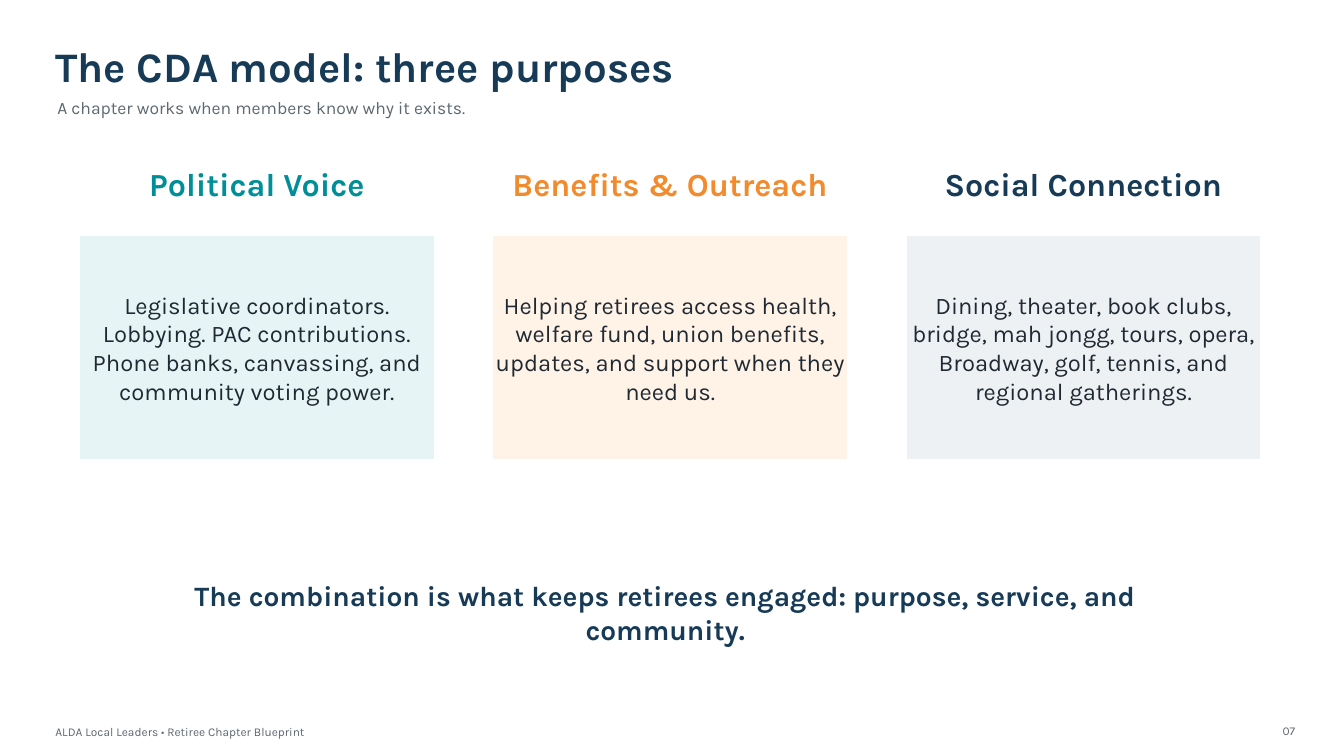
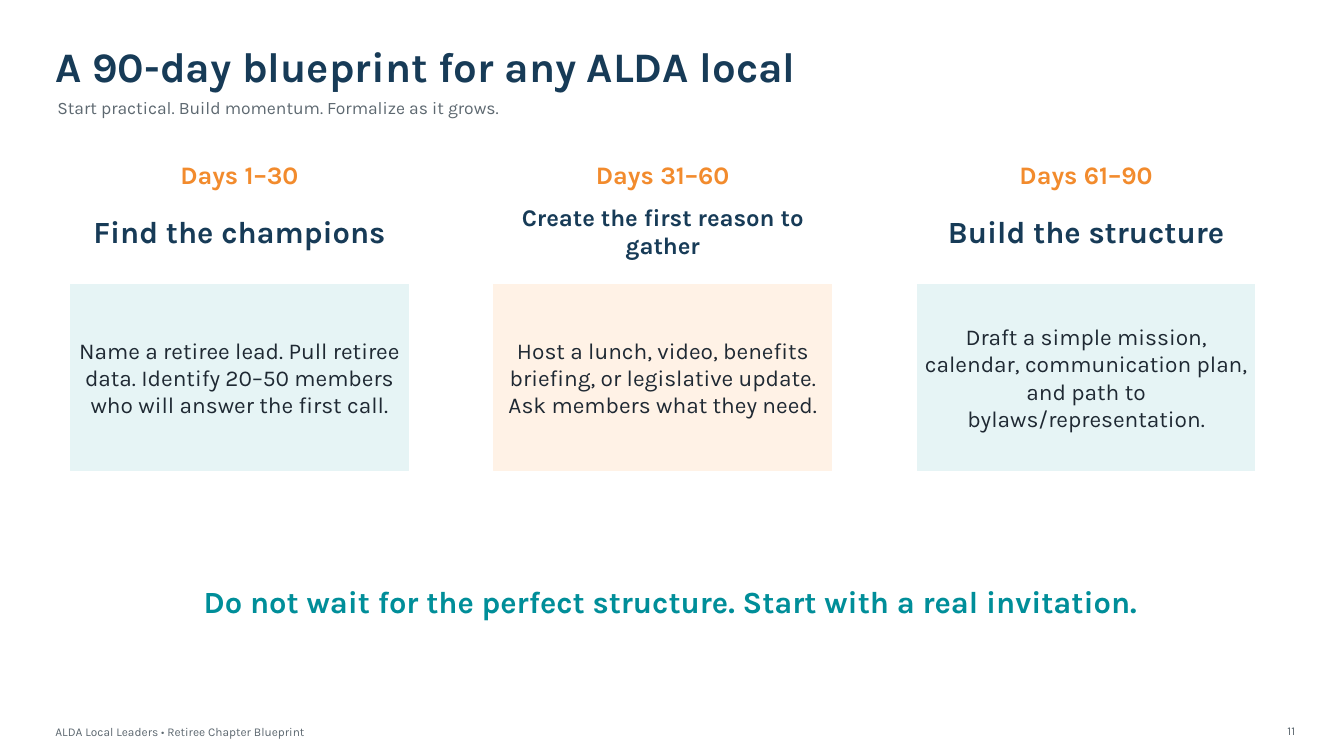
from pptx import Presentation
from pptx.dml.color import RGBColor
from pptx.enum.shapes import MSO_SHAPE as Shape
from pptx.enum.text import MSO_ANCHOR as Anchor, PP_ALIGN as Align
from pptx.util import Pt

COLOURS = {
    "navy": "173B57",
    "teal": "008E99",
    "orange": "F28B2D",
    "ink": "1F2933",
    "grey": "5D6870",
    "pale teal": "E6F4F5",
    "pale orange": "FFF2E6",
    "pale grey": "EEF1F4",
}


class Deck:
    font = "Karla"
    footer = "ALDA Local Leaders • Retiree Chapter Blueprint"

    def __init__(self):
        self.deck = Presentation()
        self.deck.slide_width = Pt(960)
        self.deck.slide_height = Pt(540)
        self.page = None

    def colour(self, name):
        return RGBColor.from_string(COLOURS[name])

    def add_page(self, title, subtitle, number):
        self.page = self.deck.slides.add_slide(self.deck.slide_layouts[6])
        self.text(title, (39.6, 28.8, 540, 36), 30, "navy", True, Align.LEFT)
        self.text(subtitle, (41, 67.7, 648, 18), 12.5, "grey", align=Align.LEFT)
        self.text(self.footer, (39.6, 514.8, 468, 15.8), 8.5, "grey", align=Align.LEFT)
        self.text(number, (896.4, 512.6, 28.8, 18), 8.5, "grey", align=Align.RIGHT)

    def set_text(self, box, words, size, colour, bold, align):
        frame = box.text_frame
        frame.text = words
        frame.word_wrap = True
        frame.vertical_anchor = Anchor.MIDDLE
        frame.margin_left = frame.margin_right = 0
        frame.margin_top = frame.margin_bottom = 0
        para = frame.paragraphs[0]
        para.alignment = align
        for span in para.runs:
            span.font.name = self.font
            span.font.size = Pt(size)
            span.font.bold = bold
            span.font.color.rgb = self.colour(colour)

    def text(self, words, area, size, colour, bold=False, align=Align.CENTER):
        box = self.page.shapes.add_textbox(*map(Pt, area))
        self.set_text(box, words, size, colour, bold, align)

    def card(self, words, area, size, fill):
        box = self.page.shapes.add_shape(Shape.RECTANGLE, *map(Pt, area))
        box.shadow.inherit = False
        box.fill.solid()
        box.fill.fore_color.rgb = self.colour(fill)
        box.line.color.rgb = self.colour(fill)
        box.line.width = Pt(0.75)
        self.set_text(box, words, size, "ink", False, Align.CENTER)

    def save(self):
        self.deck.save("out.pptx")


def add_purposes(deck):
    deck.add_page(
        "The CDA model: three purposes",
        "A chapter works when members know why it exists.",
        "07",
    )
    purposes = [
        ("Political Voice", "teal", "pale teal",
         "Legislative coordinators. Lobbying. PAC contributions. "
         "Phone banks, canvassing, and community voting power."),
        ("Benefits & Outreach", "orange", "pale orange",
         "Helping retirees access health, welfare fund, union benefits, "
         "updates, and support when they need us."),
        ("Social Connection", "navy", "pale grey",
         "Dining, theater, book clubs, bridge, mah jongg, tours, opera, "
         "Broadway, golf, tennis, and regional gatherings."),
    ]
    left, pitch, width = 57.6, 295.2, 252
    for column, (heading, colour, fill, details) in enumerate(purposes):
        x = left + column * pitch
        deck.text(heading, (x, 115.2, width, 32.4), 23, colour, True)
        deck.card(details, (x, 169.2, width, 158.4), 17, fill)
    deck.text(
        "The combination is what keeps retirees engaged: "
        "purpose, service, and community.",
        (90, 421.2, 770.4, 32.4), 20, "navy", True,
    )


def add_blueprint(deck):
    deck.add_page(
        "A 90-day blueprint for any ALDA local",
        "Start practical. Build momentum. Formalize as it grows.",
        "11",
    )
    stages = [
        ("Days 1–30", "Find the champions", 22, "pale teal",
         "Name a retiree lead. Pull retiree data. Identify 20–50 members "
         "who will answer the first call."),
        ("Days 31–60", "Create the first reason to gather", 17.1, "pale orange",
         "Host a lunch, video, benefits briefing, or legislative update. "
         "Ask members what they need."),
        ("Days 61–90", "Build the structure", 22, "pale teal",
         "Draft a simple mission, calendar, communication plan, "
         "and path to bylaws/representation."),
    ]
    left, pitch, width = 50.4, 302.4, 241.2
    for column, (days, goal, goal_size, fill, details) in enumerate(stages):
        x = left + column * pitch
        deck.text(days, (x, 111.6, width, 25.9), 18, "orange", True)
        deck.text(goal, (x, 147.6, width, 34.6), goal_size, "navy", True)
        deck.card(details, (x, 203, width, 133.2), 16.2, fill)
    deck.text(
        "Do not wait for the perfect structure. Start with a real invitation.",
        (126, 414, 705.6, 30.2), 22, "teal", True,
    )


def main():
    deck = Deck()
    add_purposes(deck)
    add_blueprint(deck)
    deck.save()


if __name__ == "__main__":
    main()
